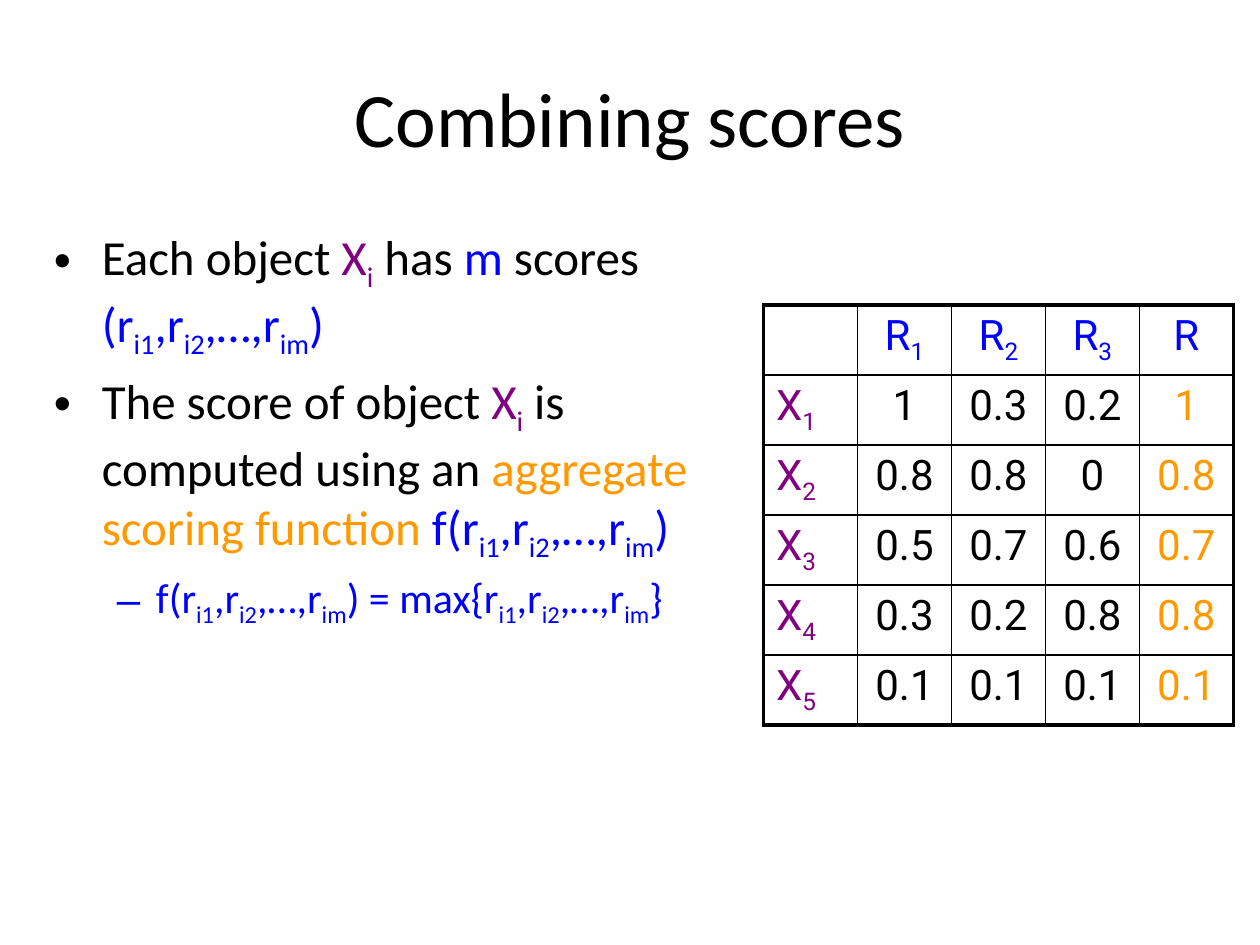
from dataclasses import dataclass

import pptx
import pptx.util
import pptx.dml.color
import pptx.enum.text
import pptx.oxml
import pptx.oxml.ns
from pptx.dml.color import RGBColor
from pptx.util import Inches, Pt

BLACK = RGBColor(0x00, 0x00, 0x00)
BLUE = RGBColor(0x00, 0x00, 0xFF)
PURPLE = RGBColor(0x80, 0x00, 0x80)
ORANGE = RGBColor(0xFF, 0x99, 0x00)
CENTER = pptx.enum.text.PP_ALIGN.CENTER
MIDDLE = pptx.enum.text.MSO_ANCHOR.MIDDLE
NS = pptx.oxml.ns.nsdecls("a")


@dataclass
class Span:
    """Text in one colour; parts between tildes are subscripts."""
    text: str
    color: RGBColor = BLACK


@dataclass
class Bullet:
    mark: str
    size: int
    left: float
    hang: float
    level: int
    spans: list[Span]


LIST = "r~i1~,r~i2~,…,r~im~"
BULLETS = [
    Bullet("•", 28, 0.38, 0.38, 0, [
        Span("Each object "), Span("X~i~", PURPLE), Span(" has "),
        Span("m", BLUE), Span(" scores "), Span(f"({LIST})", BLUE)]),
    Bullet("•", 28, 0.38, 0.38, 0, [
        Span("The score of object "), Span("X~i~", PURPLE),
        Span(" is computed using an "),
        Span("aggregate scoring function ", ORANGE),
        Span(f"f({LIST})", BLUE)]),
    Bullet("–", 24, 0.81, 0.31, 1, [
        Span(f"f({LIST}) = max{{{LIST}}}", BLUE)]),
]
GRID = [
    ["", "R~1~", "R~2~", "R~3~", "R"],
    ["X~1~", "1", "0.3", "0.2", "1"],
    ["X~2~", "0.8", "0.8", "0", "0.8"],
    ["X~3~", "0.5", "0.7", "0.6", "0.7"],
    ["X~4~", "0.3", "0.2", "0.8", "0.8"],
    ["X~5~", "0.1", "0.1", "0.1", "0.1"],
]
ROWS, COLS = len(GRID), len(GRID[0])


def write(para, spans: list[Span], size: int, face: str) -> None:
    for span in spans:
        for i, text in enumerate(span.text.split("~")):
            if not text:
                continue
            run = para.add_run()
            run.text = text
            form = {"size": Pt(size), "name": face}
            for key, value in form.items():
                setattr(run.font, key, value)
            run.font.color.rgb = span.color
            if i % 2:
                run.font._element.set("baseline", "-25000")


def add_box(slide, left: float, top: float, width: float, height: float):
    box = slide.shapes.add_textbox(
        Inches(left), Inches(top), Inches(width), Inches(height))
    box.text_frame.word_wrap = True
    return box.text_frame


def add_title(slide) -> None:
    frame = add_box(slide, 0.5, 0.3, 9, 1.25)
    frame.vertical_anchor = MIDDLE
    para = frame.paragraphs[0]
    para.alignment = CENTER
    write(para, [Span("Combining scores")], 44, "Calibri")


def add_body(slide) -> None:
    frame = add_box(slide, 0.33, 1.75, 5.7, 4.95)
    for i, item in enumerate(BULLETS):
        para = frame.add_paragraph() if i else frame.paragraphs[0]
        para.level = item.level
        para.space_before = Pt(0.2 * item.size)
        props = para._p.get_or_add_pPr()
        props.set("marL", str(Inches(item.left)))
        props.set("indent", str(-Inches(item.hang)))
        for tag in (f'<a:buFont {NS} typeface="Arial"/>',
                    f'<a:buChar {NS} char="{item.mark}"/>'):
            props.append(pptx.oxml.parse_xml(tag))
        write(para, item.spans, item.size, "Calibri")


def set_edges(cell, row: int, col: int) -> None:
    """Draw thin lines inside the table and a thick frame around it."""
    outer = {"L": col == 0, "R": col == COLS - 1,
             "T": row == 0, "B": row == ROWS - 1}
    props = cell._tc.get_or_add_tcPr()
    for side, thick in outer.items():
        props.append(pptx.oxml.parse_xml(
            f'<a:ln{side} {NS} w="{Pt(2.25 if thick else 1)}">'
            f'<a:solidFill><a:srgbClr val="{BLACK}"/></a:solidFill>'
            f'</a:ln{side}>'))
    cell.fill.background()


def pick(row: int, col: int) -> RGBColor:
    if row == 0:
        return BLUE
    return {0: PURPLE, COLS - 1: ORANGE}.get(col, BLACK)


def add_scores(slide) -> None:
    width, height = Inches(3.73), Inches(3.2)
    table = slide.shapes.add_table(
        ROWS, COLS, Inches(6.06), Inches(2.42), width, height).table
    for key, value in {"first_row": False, "horz_banding": False}.items():
        setattr(table, key, value)
    for r, line in enumerate(GRID):
        for c, text in enumerate(line):
            cell = table.cell(r, c)
            set_edges(cell, r, c)
            para = cell.text_frame.paragraphs[0]
            para.space_before = Pt(4.8)
            if c:
                para.alignment = CENTER
            write(para, [Span(text, pick(r, c))], 24, "Roboto")


def main() -> None:
    deck = pptx.Presentation()
    deck.slide_width, deck.slide_height = Inches(10), Inches(7.5)
    slide = deck.slides.add_slide(deck.slide_layouts[6])
    add_title(slide)
    add_body(slide)
    add_scores(slide)
    deck.save("out.pptx")


if __name__ == "__main__":
    main()
